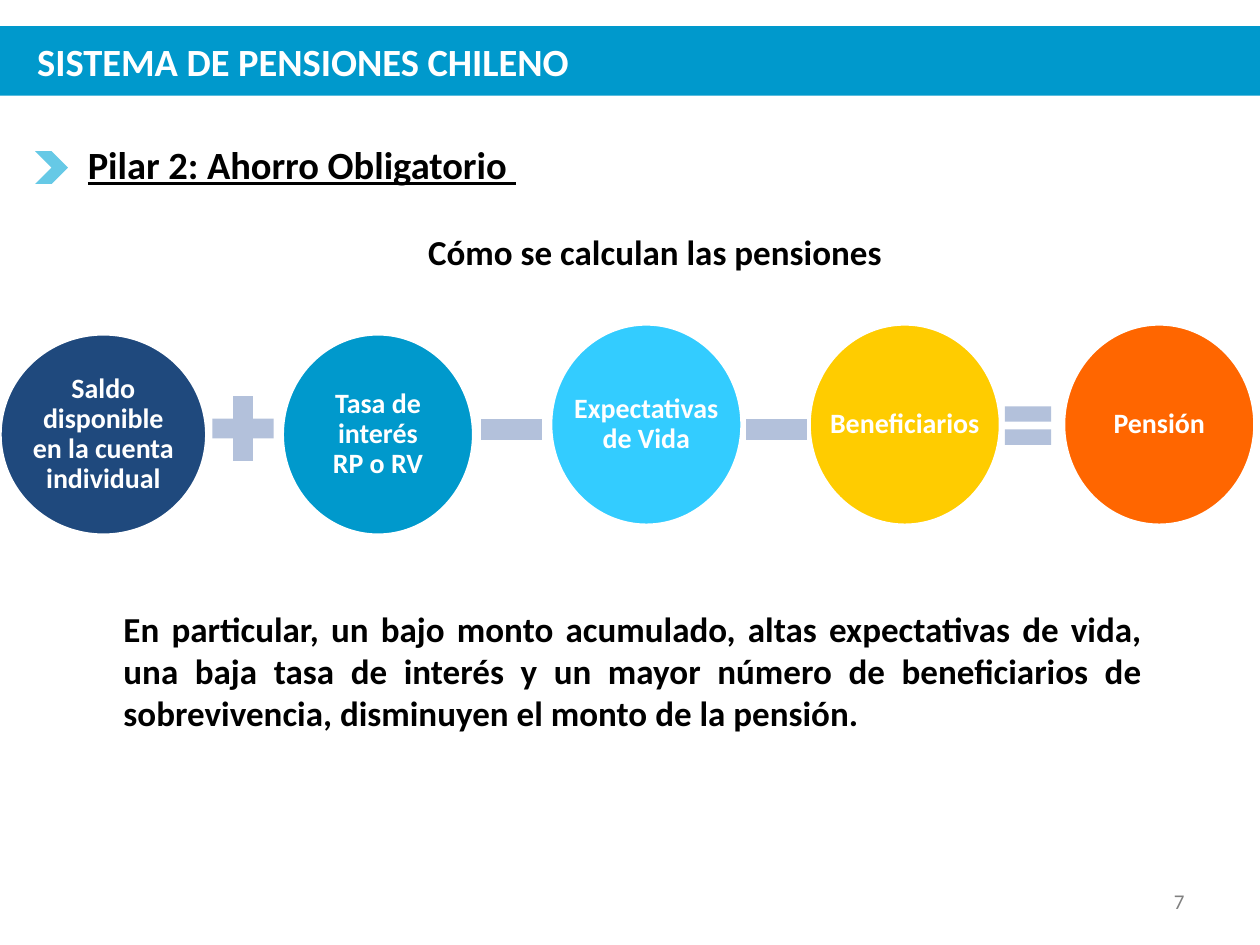
"""Build the slide on how Chilean pensions are calculated."""
from lxml import etree
from pptx import Presentation
from pptx.dml.color import RGBColor
from pptx.enum.shapes import MSO_SHAPE
from pptx.enum.text import MSO_ANCHOR, PP_ALIGN
from pptx.oxml.ns import qn
from pptx.util import Cm, Pt

RECT, OVAL, CHEVRON = MSO_SHAPE.RECTANGLE, MSO_SHAPE.OVAL, MSO_SHAPE.CHEVRON
PLUS, MINUS, EQUAL = MSO_SHAPE.MATH_PLUS, MSO_SHAPE.MATH_MINUS, MSO_SHAPE.MATH_EQUAL
LEFT, CENTER, RIGHT, JUSTIFY = PP_ALIGN.LEFT, PP_ALIGN.CENTER, PP_ALIGN.RIGHT, PP_ALIGN.JUSTIFY
TOP, MIDDLE = MSO_ANCHOR.TOP, MSO_ANCHOR.MIDDLE

COLORS = {
    "white": "FFFFFF", "black": "000000", "gray": "808080",
    "navy": "1F497D", "blue": "0099CC", "sky": "33CCFF",
    "yellow": "FFCC00", "orange": "FF6600",
    "operator": "B3C1DB", "chevron": "00A6D6",
}

prs = Presentation()
prs.slide_width, prs.slide_height = Cm(25.4), Cm(19.05)
slide = prs.slides.add_slide(prs.slide_layouts[6])


def add_figure(kind, left, top, width, height, color):
    figure = slide.shapes.add_shape(kind, Cm(left), Cm(top), Cm(width), Cm(height))
    figure.shadow.inherit = False
    figure.fill.solid()
    figure.fill.fore_color.rgb = RGBColor.from_string(COLORS[color])
    figure.line.fill.background()
    return figure


def add_text(text, left, top, width, height, size, color, align, anchor=TOP, bold=True):
    box = slide.shapes.add_textbox(Cm(left), Cm(top), Cm(width), Cm(height))
    frame = box.text_frame
    frame.word_wrap = True
    frame.vertical_anchor = anchor
    paragraph = frame.paragraphs[0]
    paragraph.text = text
    paragraph.alignment = align
    paragraph.font.name = "Calibri"
    paragraph.font.size = Pt(size)
    paragraph.font.bold = bold
    paragraph.font.color.rgb = RGBColor.from_string(COLORS[color])
    return frame


add_figure(RECT, 0, 0.53, 25.4, 1.4, "blue")
add_text("SISTEMA DE PENSIONES CHILENO", 0.5, 0.53, 22.86, 1.4, 22, "white", LEFT, MIDDLE)

marker = add_figure(CHEVRON, 0.71, 3.05, 0.66, 0.66, "chevron")
marker_color = marker.fill._xPr.find(qn("a:solidFill"))[0]
etree.SubElement(marker_color, qn("a:alpha"), val="60000")
pillar = add_text("Pilar 2: Ahorro Obligatorio ", 1.52, 2.72, 22.17, 1.19, 22, "black", JUSTIFY)
pillar.paragraphs[0].font.underline = True
add_text("Cómo se calculan las pensiones", 1.9, 4.52, 22.61, 1.12, 20, "black", CENTER)

circle_height, label_height = 4.06, 2.87
factors = [
    ("Saldo disponible en la cuenta individual", 0, 6.73, 4.17, 2.95, "navy"),
    ("Tasa de interés\vRP o RV", 5.69, 6.73, 3.86, 2.74, "blue"),
    ("Expectativas de Vida", 11.1, 6.53, 3.86, 3.02, "sky"),
    ("Beneficiarios", 16.31, 6.53, 3.86, 3.33, "yellow"),
    ("Pensión", 21.44, 6.53, 3.86, 2.74, "orange"),
]
for name, left, top, width, label_width, color in factors:
    circle = add_figure(OVAL, left, top, width, circle_height, color)
    circle.line.color.rgb = RGBColor.from_string(COLORS["white"])
    circle.line.width = Pt(2)
    label = add_text(name, left + (width - label_width) / 2, top + (circle_height - label_height) / 2,
                     label_width, label_height, 16, "white", CENTER, MIDDLE)
    label.margin_left = label.margin_right = label.margin_top = label.margin_bottom = Cm(0.03)
    label.paragraphs[0].line_spacing = 0.9

operators = [
    (PLUS, 4.06, 7.75, 1.68, 1.78),
    (MINUS, 9.47, 7.77, 1.68, 1.78),
    (MINUS, 14.81, 7.77, 1.68, 1.78),
    (EQUAL, 20.09, 7.92, 1.27, 1.32),
]
for kind, left, top, width, height in operators:
    add_figure(kind, left, top, width, height, "operator")

add_text("En particular, un bajo monto acumulado, altas expectativas de vida, una baja tasa de "
         "interés y un mayor número de beneficiarios de sobrevivencia, disminuyen el monto de "
         "la pensión.", 2.24, 12.12, 21.03, 2.82, 20, "black", JUSTIFY)
add_text("7", 18.21, 17.65, 5.92, 1.02, 12, "gray", RIGHT, MIDDLE, bold=False)

prs.save("out.pptx")
